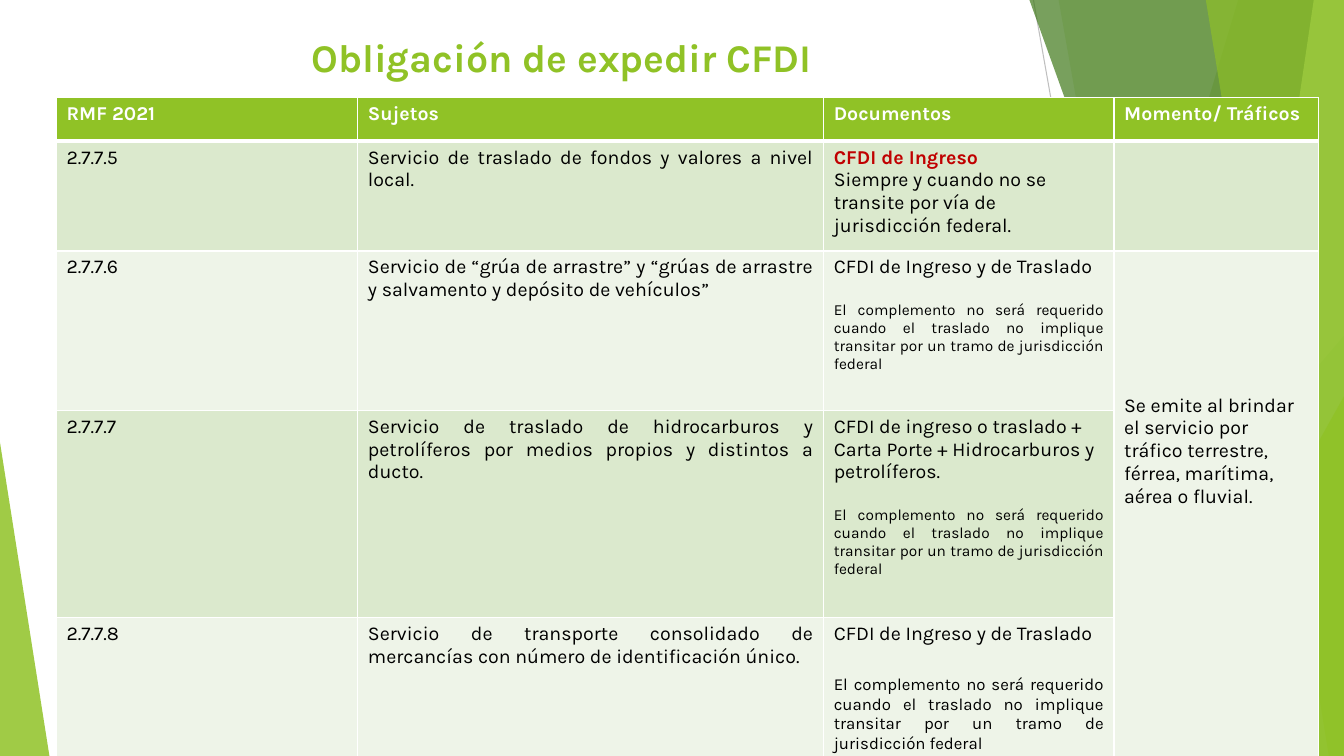
from dataclasses import dataclass

from lxml.etree import SubElement
from pptx import Presentation
from pptx.dml.color import RGBColor
from pptx.enum.shapes import MSO_CONNECTOR as Connector, MSO_SHAPE as Shape
from pptx.enum.text import MSO_ANCHOR as Anchor, MSO_AUTO_SIZE as AutoSize, PP_ALIGN as Align
from pptx.oxml.ns import qn
from pptx.util import Inches, Pt

FONT = "Karla"
GREEN = "90C226"
WHITE = "FFFFFF"
BLACK = "000000"
RED = "C00000"
PALE_BANDS = ("DBE9CD", "EEF4E8")
WIDTH, HEIGHT = 13.33, 7.5


@dataclass
class Line:
    start: tuple[float, float]
    end: tuple[float, float]
    color: str


@dataclass
class Band:
    top_left: float
    bottom_left: float
    color: str
    opacity: int


@dataclass
class Triangle:
    left: float
    top: float
    width: float
    apex: float
    color: str
    opacity: int


@dataclass
class Text:
    text: str
    size: float = 14
    color: str = BLACK
    bold: bool = False
    align: Align = Align.LEFT
    before: float = 0


def exemption(size: float = 11, before: float = 16.2) -> Text:
    return Text("El complemento no será requerido cuando el traslado no implique "
                "transitar por un tramo de jurisdicción federal",
                size=size, align=Align.JUSTIFY, before=before)


def subject(text: str) -> Text:
    return Text(text, align=Align.JUSTIFY)


DECORATION = [
    Line((10.25, 0), (11.58, HEIGHT), "BFBFBF"),
    Line((WIDTH, 4.03), (8.12, HEIGHT), "D9D9D9"),
    Band(12.28, 10.04, GREEN, 30),
    Band(10.5, 11.83, GREEN, 20),
    Triangle(9.77, 3.33, 3.56, 1, "54A021", 72),
    Band(10.21, 12.91, "3F7819", 70),
    Band(13.03, 11.92, "C0E474", 70),
    Band(11.96, 13.18, GREEN, 65),
    Triangle(11.34, 3.93, 1.99, 1, GREEN, 80),
    Triangle(0, 4.39, 0.49, 0, GREEN, 85),
]

COLUMNS = [2.99, 4.62, 2.88, 2.03]
ROWS = [0.43, 1.09, 1.58, 2.06, 1.72]
HEADERS = ["RMF 2021", "Sujetos", "Documentos", "Momento/ Tráficos"]
MOMENT = "Se emite al brindar el servicio por tráfico terrestre, férrea, marítima, aérea o fluvial."
CELLS = [
    [[Text(header, color=WHITE, bold=True)] for header in HEADERS],
    [[Text("2.7.7.5")],
     [subject("Servicio de traslado de fondos y valores a nivel local.")],
     [Text("CFDI de Ingreso", color=RED, bold=True),
      Text("Siempre y cuando no se transite por vía de jurisdicción federal.")],
     []],
    [[Text("2.7.7.6")],
     [subject("Servicio de “grúa de arrastre” y “grúas de arrastre y salvamento "
              "y depósito de vehículos”")],
     [Text("CFDI de Ingreso y de Traslado"), exemption()],
     [Text(MOMENT)]],
    [[Text("2.7.7.7")],
     [subject("Servicio de traslado de hidrocarburos y petrolíferos por medios propios "
              "y distintos a ducto.")],
     [Text("CFDI de ingreso o traslado + Carta Porte + Hidrocarburos y petrolíferos."),
      exemption()],
     []],
    [[Text("2.7.7.8")],
     [subject("Servicio de transporte consolidado de mercancías con número de "
              "identificación único.")],
     [Text("CFDI de Ingreso y de Traslado"), exemption(size=12, before=21)],
     []],
]


def rgb(color: str) -> RGBColor:
    return RGBColor.from_string(color)


def paint(shape, color: str, opacity: int) -> None:
    shape.shadow.inherit = False
    shape.line.fill.background()
    shape.fill.solid()
    shape.fill.fore_color.rgb = rgb(color)
    tint = shape.fill._xPr.find(qn("a:solidFill"))[0]
    SubElement(tint, qn("a:alpha")).set("val", str(opacity * 1000))


def draw_line(slide, line: Line) -> None:
    points = [Inches(value) for value in (*line.start, *line.end)]
    connector = slide.shapes.add_connector(Connector.STRAIGHT, *points)
    connector.line.color.rgb = rgb(line.color)
    connector.line.width = Pt(0.75)
    SubElement(connector._element.spPr, qn("a:effectLst"))


def draw_band(slide, band: Band) -> None:
    builder = slide.shapes.build_freeform(Inches(band.top_left), 0)
    corners = [(WIDTH, 0), (WIDTH, HEIGHT), (band.bottom_left, HEIGHT)]
    builder.add_line_segments([(Inches(x), Inches(y)) for x, y in corners], close=True)
    paint(builder.convert_to_shape(), band.color, band.opacity)


def draw_triangle(slide, triangle: Triangle) -> None:
    shape = slide.shapes.add_shape(
        Shape.ISOSCELES_TRIANGLE, Inches(triangle.left), Inches(triangle.top),
        Inches(triangle.width), Inches(HEIGHT - triangle.top))
    shape.adjustments[0] = triangle.apex
    paint(shape, triangle.color, triangle.opacity)


def write(paragraph, text: str, *, size: float, color: str, bold: bool,
          align: Align, before: float = 0) -> None:
    paragraph.alignment = align
    paragraph.space_before = Pt(before)
    run = paragraph.add_run()
    run.text = text
    run.font.name = FONT
    run.font.size = Pt(size)
    run.font.bold = bold
    run.font.color.rgb = rgb(color)


def set_borders(cell, **widths: float) -> None:
    properties = cell._tc.get_or_add_tcPr()
    for side in ("L", "R", "T", "B"):
        border = SubElement(properties, qn(f"a:ln{side}"), w=str(Pt(widths.get(side, 1))))
        fill = SubElement(border, qn("a:solidFill"))
        SubElement(fill, qn("a:srgbClr"), val=WHITE)


def add_title(slide, text: str) -> None:
    title = slide.shapes.title
    title.left, title.top = Inches(0.87), Inches(0.28)
    title.width, title.height = Inches(9.4), Inches(1.44)
    frame = title.text_frame
    frame.auto_size = AutoSize.NONE
    frame.vertical_anchor = Anchor.TOP
    write(frame.paragraphs[0], text, size=28, color=GREEN, bold=True, align=Align.CENTER)


def fill_cell(cell, texts: list[Text], row: int) -> None:
    thick = {0: {"B": 3}, 1: {"T": 3}}
    set_borders(cell, **thick.get(row, {}))
    cell.fill.solid()
    cell.fill.fore_color.rgb = rgb(PALE_BANDS[(row - 1) % 2] if row else GREEN)
    for index, item in enumerate(texts):
        frame = cell.text_frame
        paragraph = frame.add_paragraph() if index else frame.paragraphs[0]
        write(paragraph, item.text, size=item.size, color=item.color, bold=item.bold,
              align=item.align, before=item.before)


def add_rules_table(slide) -> None:
    table = slide.shapes.add_table(
        len(ROWS), len(COLUMNS), Inches(0.56), Inches(0.97),
        Inches(sum(COLUMNS)), Inches(sum(ROWS))).table
    for column, width in zip(table.columns, COLUMNS):
        column.width = Inches(width)
    for row, height in zip(table.rows, ROWS):
        row.height = Inches(height)
    for row, cells in enumerate(CELLS):
        for column, texts in enumerate(cells):
            fill_cell(table.cell(row, column), texts, row)
    moment_cell = table.cell(2, 3)
    moment_cell.merge(table.cell(4, 3))
    moment_cell.margin_top = Inches(1.42)


def main() -> None:
    presentation = Presentation()
    presentation.slide_width, presentation.slide_height = Inches(WIDTH), Inches(HEIGHT)
    slide = presentation.slides.add_slide(presentation.slide_layouts[5])
    draw = {Line: draw_line, Band: draw_band, Triangle: draw_triangle}
    for item in DECORATION:
        draw[type(item)](slide, item)
    add_title(slide, "Obligación de expedir CFDI")
    add_rules_table(slide)
    presentation.save("out.pptx")


if __name__ == "__main__":
    main()
